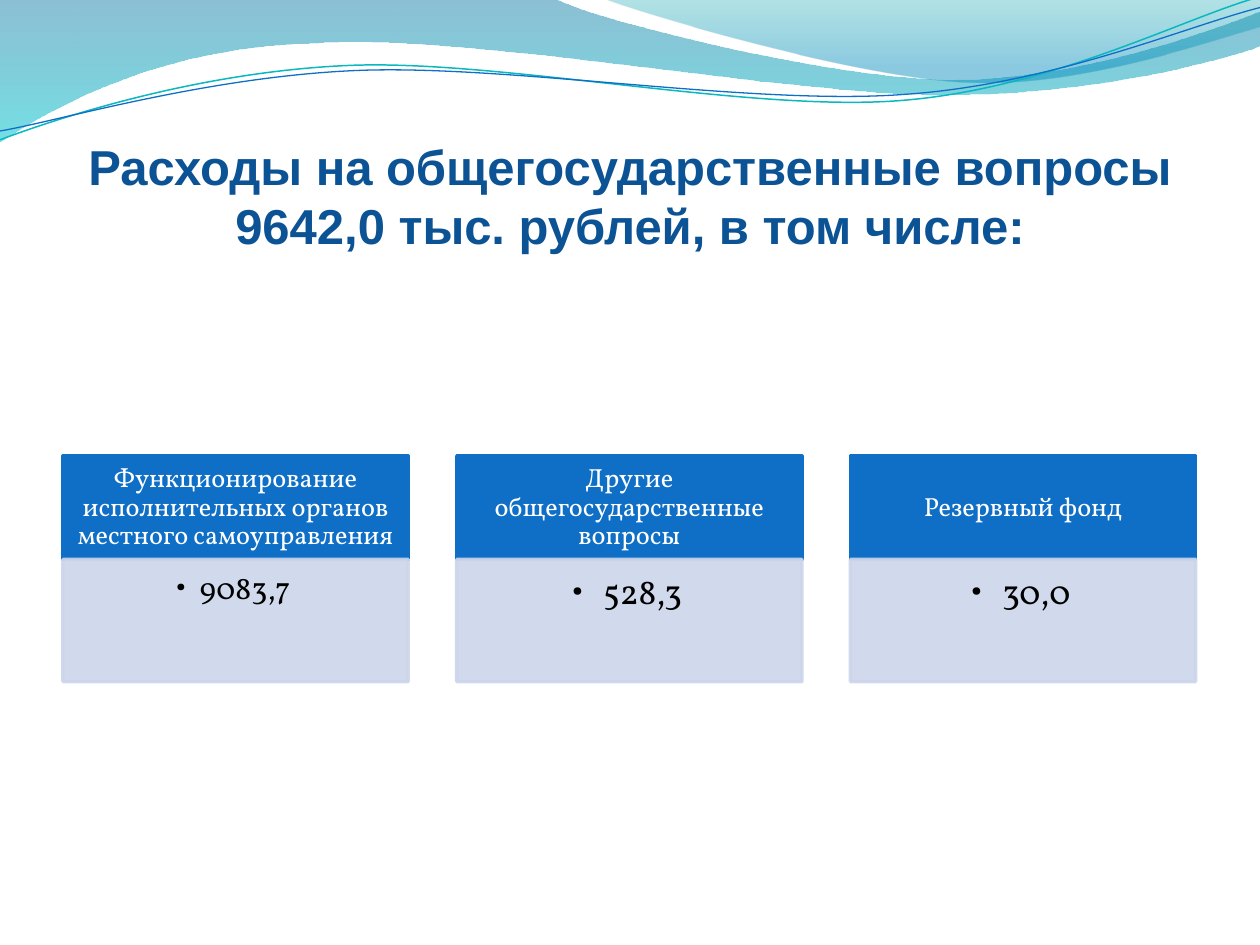
from lxml.etree import Element, SubElement
from pptx import Presentation
from pptx.dml.color import RGBColor
from pptx.enum.shapes import MSO_SHAPE
from pptx.enum.text import MSO_ANCHOR, MSO_AUTO_SIZE, PP_ALIGN
from pptx.oxml.ns import qn
from pptx.util import Inches, Pt

WIDE, HIGH = 10, 7.5
TITLE = "Расходы на общегосударственные вопросы 9642,0 тыс. рублей, в том числе:"
# heading, amount, amount size, bullet indent, amount insets
CARDS = [
    ("Функционирование исполнительных органов местного самоуправления",
     "9083,7", 18, 0.19, (0.1, 0.1, 0.14, 0.16)),
    ("Другие общегосударственные вопросы",
     "528,3", 20, 0.25, (0.12, 0.12, 0.16, 0.17)),
    ("Резервный фонд", "30,0", 20, 0.25, (0.12, 0.12, 0.16, 0.17)),
]
# Each path is a start point, then line ends (2 numbers) or curves (6 numbers).
# Bands add gradient stops: position, colour, opacity in percent.
BANDS = [
    ([(0, 0), (4.4, -0.01), (4.76, 0.17, 6.64, 0.63, 7.58, 0.63),
      (8.53, 0.63, 9.58, 0.26, 10, 0.09), (10.01, 0.36),
      (9.83, 0.44, 8.7, 0.76, 7.46, 0.75), (6.22, 0.75, 3.82, 0.28, 2.57, 0.34),
      (1.29, 0.36, 0.46, 0.83, -0.01, 1.13)],
     [(0, "0074A1", 45), (1, "00C6CF", 55)]),
    ([(4.79, -0.01), (5.09, 0.11, 6.82, 0.62, 7.69, 0.65),
      (8.56, 0.69, 9.61, 0.32, 10, 0.21), (10, 0)],
     [(0, "00A1A9", 30), (0.8, "008BBF", 45)]),
]
WAVES = [
    ([(0, 1.11), (0.48, 0.93, 1.58, 0.57, 2.77, 0.52),
      (3.95, 0.47, 5.93, 0.89, 7.13, 0.8), (8.33, 0.71, 9.38, 0.15, 9.98, -0.02)],
     "0AB8BF", 0.85),
    ([(0, 1.04), (0.47, 0.96, 1.64, 0.61, 2.83, 0.56),
      (4.03, 0.51, 5.97, 0.84, 7.17, 0.75), (8.36, 0.67, 9.41, 0.21, 10, 0.06)],
     "0F6FC6", 0.75),
]
LEFT, TOP, CARD, PITCH = 0.5, 3.62, 2.74, 3.125
HEAD, BODY = 0.82, 0.97


def rgb(code):
    return RGBColor.from_string(code)


def fade(shape, *levels):
    """Set the opacity, in percent, of the shape's colours in order."""
    tints = list(shape.element.spPr.iter(qn("a:srgbClr")))
    for tint, level in zip(tints, levels):
        SubElement(tint, qn("a:alpha"), val=str(level * 1000))


def bend(shape, route):
    """Turn the straight segments into curves where the route has controls."""
    lines = list(shape.element.spPr.iter(qn("a:lnTo")))
    for line, part in zip(lines, route[1:]):
        if len(part) == 2:
            continue
        curve = Element(qn("a:cubicBezTo"))
        for x, y in (part[:2], part[2:4]):
            SubElement(curve, qn("a:pt"), x=str(Inches(x) - shape.left),
                       y=str(Inches(y) - shape.top))
        curve.append(line[0])
        line.getparent().replace(line, curve)


def draw(slide, route, close):
    ends = [(Inches(part[-2]), Inches(part[-1])) for part in route]
    pen = slide.shapes.build_freeform(*ends[0])
    pen.add_line_segments(ends[1:], close=close)
    shape = pen.convert_to_shape()
    bend(shape, route)
    shape.shadow.inherit = False
    return shape


def band(slide, route, stops):
    shape = draw(slide, route, True)
    shape.line.fill.background()
    shape.fill.gradient()
    shape.fill.gradient_angle = 270
    for stop, (place, code, _) in zip(shape.fill.gradient_stops, stops):
        stop.position = place
        stop.color.rgb = rgb(code)
    fade(shape, *(level for _, _, level in stops))


def wave(slide, route, code, width):
    shape = draw(slide, route, False)
    shape.fill.background()
    shape.line.color.rgb = rgb(code)
    shape.line.width = Pt(width)


def write(shape, text, size, font, code, insets, anchor, bold=False):
    frame = shape.text_frame
    frame.word_wrap = True
    frame.auto_size = MSO_AUTO_SIZE.NONE
    frame.vertical_anchor = anchor
    (frame.margin_left, frame.margin_top,
     frame.margin_right, frame.margin_bottom) = map(Inches, insets)
    para = frame.paragraphs[0]
    para.alignment = PP_ALIGN.CENTER
    run = para.add_run()
    run.text = text
    run.font.size, run.font.name, run.font.bold = Pt(size), font, bold
    run.font.color.rgb = rgb(code)
    return para


def block(slide, left, top, high, code):
    shape = slide.shapes.add_shape(
        MSO_SHAPE.RECTANGLE, *map(Inches, (left, top, CARD, high)))
    shape.shadow.inherit = False
    shape.fill.solid()
    shape.fill.fore_color.rgb = rgb(code)
    shape.line.color.rgb = rgb(code)
    shape.line.width = Pt(2)
    return shape


def card(slide, left, label, amount, size, indent, insets):
    head = block(slide, left, TOP, HEAD, "0F6FC6")
    para = write(head, label, 15, "Vollkorn", "FFFFFF",
                 (0.1, 0.07, 0.1, 0.07), MSO_ANCHOR.MIDDLE)
    para.line_spacing = 0.9

    body = block(slide, left, TOP + HEAD, BODY, "CCD5EA")
    fade(body, 90, 90)
    para = write(body, amount, size, "Vollkorn", "000000", insets, MSO_ANCHOR.TOP)
    para.level = 1
    para.line_spacing = 0.9
    props = para._p.get_or_add_pPr()
    props.set("marL", str(Inches(indent)))
    props.set("indent", str(-Inches(indent)))
    SubElement(props, qn("a:buFont"), typeface="Vollkorn")
    SubElement(props, qn("a:buChar"), char="•")


def main():
    deck = Presentation()
    deck.slide_width, deck.slide_height = Inches(WIDE), Inches(HIGH)
    slide = deck.slides.add_slide(deck.slide_layouts[5])
    for item in BANDS:
        band(slide, *item)
    for item in WAVES:
        wave(slide, *item)

    title = slide.shapes.title
    title.left, title.top, title.width, title.height = map(
        Inches, (0.5, 0.77, WIDE - 1, 1.25))
    write(title, TITLE, 28, "Arial", "0B5394", (0, 0.05, 0, 0),
          MSO_ANCHOR.BOTTOM, True)
    title.element.getparent().append(title.element)  # in front of the waves

    for col, item in enumerate(CARDS):
        card(slide, LEFT + col * PITCH, *item)
    deck.save("out.pptx")


if __name__ == "__main__":
    main()
